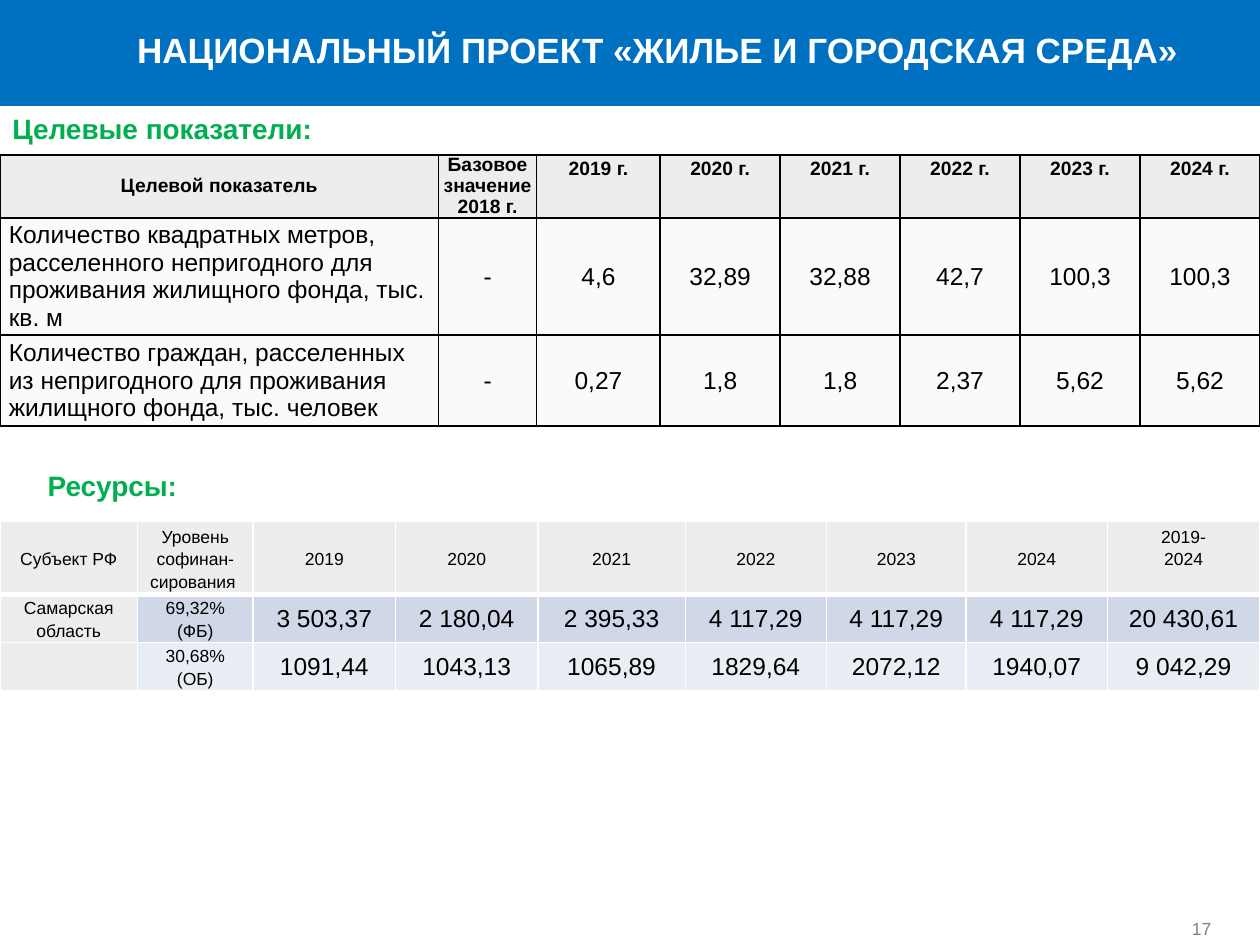
from dataclasses import dataclass, field

import lxml.etree
import pptx
import pptx.dml.color
import pptx.enum.shapes
import pptx.enum.text
import pptx.oxml.ns
import pptx.util

ALIGN = pptx.enum.text.PP_ALIGN
ANCHOR = pptx.enum.text.MSO_ANCHOR
UNIT = 0.1  # grid step in inches: the slide is 100 columns by 75 rows


@dataclass(frozen=True)
class Theme:
    font: str = "Arial"
    band: str = "0070C1"
    accent: str = "00B050"
    black: str = "000000"
    white: str = "FFFFFF"
    gray: str = "808080"
    header: str = "EDEDED"
    pale: str = "F2F2F2"
    label: str = "DCDCDC"
    federal: str = "D0D8E8"
    regional: str = "E9EDF4"
    title: int = 20
    heading: int = 16
    value: int = 14
    column: int = 11
    small: int = 10


T = Theme()


@dataclass(frozen=True)
class Label:
    text: str
    box: tuple  # left, top, width, height in grid steps
    size: int
    color: str
    bold: bool = True
    align: ALIGN = ALIGN.LEFT
    anchor: ANCHOR = ANCHOR.TOP
    side: float = 1
    wrap: bool = False


@dataclass(frozen=True)
class CellStyle:
    fill: str
    size: int
    opacity: int = 100
    bold: bool = False
    align: ALIGN = ALIGN.CENTER
    anchor: ANCHOR = ANCHOR.MIDDLE
    spacing: object = None
    insets: tuple = (0.7, 0, 0.7, 0)  # left, top, right, bottom
    bottom_line: int = 1


@dataclass(frozen=True)
class Grid:
    top: float
    cols: list
    rows: list
    line: str
    cells: list = field(default_factory=list)  # rows of (text, style)


def steps(n: float) -> int:
    return pptx.util.Inches(n * UNIT)


def rgb(color: str) -> pptx.dml.color.RGBColor:
    return pptx.dml.color.RGBColor.from_string(color)


def set_font(p, size: int, color: str, bold: bool) -> None:
    p.font.name, p.font.size, p.font.bold = T.font, pptx.util.Pt(size), bold
    p.font.color.rgb = rgb(color)


def add_label(s, label: Label) -> None:
    tf = s.shapes.add_textbox(*map(steps, label.box)).text_frame
    tf.word_wrap = label.wrap
    tf.vertical_anchor = label.anchor
    tf.margin_left = tf.margin_right = steps(label.side)
    tf.margin_top = tf.margin_bottom = steps(0.5)
    p = tf.paragraphs[0]
    p.text, p.alignment = label.text, label.align
    set_font(p, label.size, label.color, label.bold)


def add_borders(tc_pr, color: str, bottom: int) -> None:
    for i, (side, width) in enumerate((("L", 1), ("R", 1), ("T", 1), ("B", bottom))):
        ln = lxml.etree.Element(pptx.oxml.ns.qn(f"a:ln{side}"), w=str(pptx.util.Pt(width)))
        fill = lxml.etree.SubElement(ln, pptx.oxml.ns.qn("a:solidFill"))
        lxml.etree.SubElement(fill, pptx.oxml.ns.qn("a:srgbClr"), val=color)
        tc_pr.insert(i, ln)


def fill_cell(cell, text: str, style: CellStyle, line: str) -> None:
    cell.fill.solid()
    cell.fill.fore_color.rgb = rgb(style.fill)
    tc_pr = cell._tc.get_or_add_tcPr()
    if style.opacity < 100:
        color = tc_pr.find(".//" + pptx.oxml.ns.qn("a:srgbClr"))
        lxml.etree.SubElement(color, pptx.oxml.ns.qn("a:alpha"), val=str(style.opacity * 1000))
    add_borders(tc_pr, line, style.bottom_line)
    cell.vertical_anchor = style.anchor
    cell.margin_left, cell.margin_top, cell.margin_right, cell.margin_bottom = map(steps, style.insets)
    cell.text_frame.text = text
    for p in cell.text_frame.paragraphs:
        p.alignment, p.line_spacing = style.align, style.spacing
        set_font(p, style.size, T.black, style.bold)


def add_grid(s, grid: Grid) -> None:
    box = (0, grid.top, sum(grid.cols), sum(grid.rows))
    table = s.shapes.add_table(len(grid.rows), len(grid.cols), *map(steps, box)).table
    table.first_row = table.horz_banding = False
    for col, width in zip(table.columns, grid.cols):
        col.width = steps(width)
    for row, height in zip(table.rows, grid.rows):
        row.height = steps(height)
    for r, row in enumerate(grid.cells):
        for c, (text, style) in enumerate(row):
            fill_cell(table.cell(r, c), text, style, grid.line)


def styled(texts: list, style: CellStyle) -> list:
    return [(text, style) for text in texts]


# Target indicators
TIGHT = (0.1, 0, 0.1, 0)
EXACT = pptx.util.Pt(12)
HEAD = CellStyle(T.header, T.column, bold=True, spacing=EXACT, insets=TIGHT)
HEAD_BASE = CellStyle(T.header, T.column, bold=True, spacing=EXACT, insets=TIGHT, anchor=ANCHOR.BOTTOM)
HEAD_YEAR = CellStyle(T.header, T.column, bold=True, spacing=1.15, insets=TIGHT, anchor=ANCHOR.TOP)
NAME = CellStyle(T.pale, T.value, 36, align=ALIGN.LEFT)
BASE = CellStyle(T.pale, T.value, 36, insets=(0, 0, 0, 0))
VALUE = CellStyle(T.pale, T.value, 36)
INDICATORS = [
    ("Количество квадратных метров, расселенного непригодного для проживания жилищного фонда, тыс. кв. м",
     ["4,6", "32,89", "32,88", "42,7", "100,3", "100,3"]),
    ("Количество граждан, расселенных из непригодного для проживания жилищного фонда, тыс. человек",
     ["0,27", "1,8", "1,8", "2,37", "5,62", "5,62"]),
]
TARGETS = Grid(
    12.3, [34.8, 7.8, 9.8] + [9.52] * 5, [5, 9.3, 7.2], T.black,
    [[("Целевой показатель", HEAD), ("Базовое значение 2018 г.", HEAD_BASE)]
     + styled([f"{year} г." for year in range(2019, 2025)], HEAD_YEAR)]
    + [[(name, NAME), ("-", BASE)] + styled(values, VALUE) for name, values in INDICATORS],
)

# Resources
MONEY = (0.1, 0.1, 0.1, 0)
YEAR = CellStyle(T.label, T.small, 50, spacing=1.15, bottom_line=3)
TOTAL = CellStyle(T.label, T.small, 50, spacing=1.15, bottom_line=3, insets=(0.7, 0, 0.7, 1.8))
REGION = CellStyle(T.label, T.small, 50, spacing=1.15)
FUNDING = [
    ("Самарская область", "69,32% (ФБ)", T.federal,
     ["3 503,37", "2 180,04", "2 395,33", "4 117,29", "4 117,29", "4 117,29", "20 430,61"]),
    ("", "30,68% (ОБ)", T.regional,
     ["1091,44", "1043,13", "1065,89", "1829,64", "2072,12", "1940,07", "9 042,29"]),
]
RESOURCES = Grid(
    41.4, [10.9, 9.2, 11.3, 11.3, 11.7, 11.2, 11.1, 11.2, 12.1], [5.8, 3.8, 3.8], T.white,
    [styled(["Субъект РФ", "Уровень софинан-сирования "] + [str(y) for y in range(2019, 2025)], YEAR)
     + [("2019-\n2024", TOTAL)]]
    + [[(region, REGION), (share, CellStyle(color, T.small, spacing=1.15))]
       + styled(values, CellStyle(color, T.value, insets=MONEY))
       for region, share, color, values in FUNDING],
)

LABELS = [
    Label("НАЦИОНАЛЬНЫЙ ПРОЕКТ «ЖИЛЬЕ И ГОРОДСКАЯ СРЕДА»", (10, 1.8, 84.4, 4.4),
          T.title, T.white, align=ALIGN.CENTER, side=0.5),
    Label("Целевые показатели:", (0, 8.4, 36.2, 3.7), T.heading, T.accent, wrap=True),
    Label("Ресурсы:", (2.8, 36.7, 13, 3.7), T.heading, T.accent),
    Label("17", (94.1, 71, 5.6, 4), T.small, T.gray, bold=False, anchor=ANCHOR.BOTTOM, side=0.5, wrap=True),
]


def main() -> None:
    prs = pptx.Presentation()
    prs.slide_width, prs.slide_height = steps(100), steps(75)
    s = prs.slides.add_slide(prs.slide_layouts[6])

    # Title band
    sp = s.shapes.add_shape(pptx.enum.shapes.MSO_SHAPE.RECTANGLE, 0, 0, steps(100), steps(8.4))
    sp.shadow.inherit = False
    sp.fill.solid()
    sp.fill.fore_color.rgb = rgb(T.band)
    sp.line.fill.background()

    # Tables and captions
    for grid in (TARGETS, RESOURCES):
        add_grid(s, grid)
    for label in LABELS:
        add_label(s, label)
    prs.save("out.pptx")


if __name__ == "__main__":
    main()
